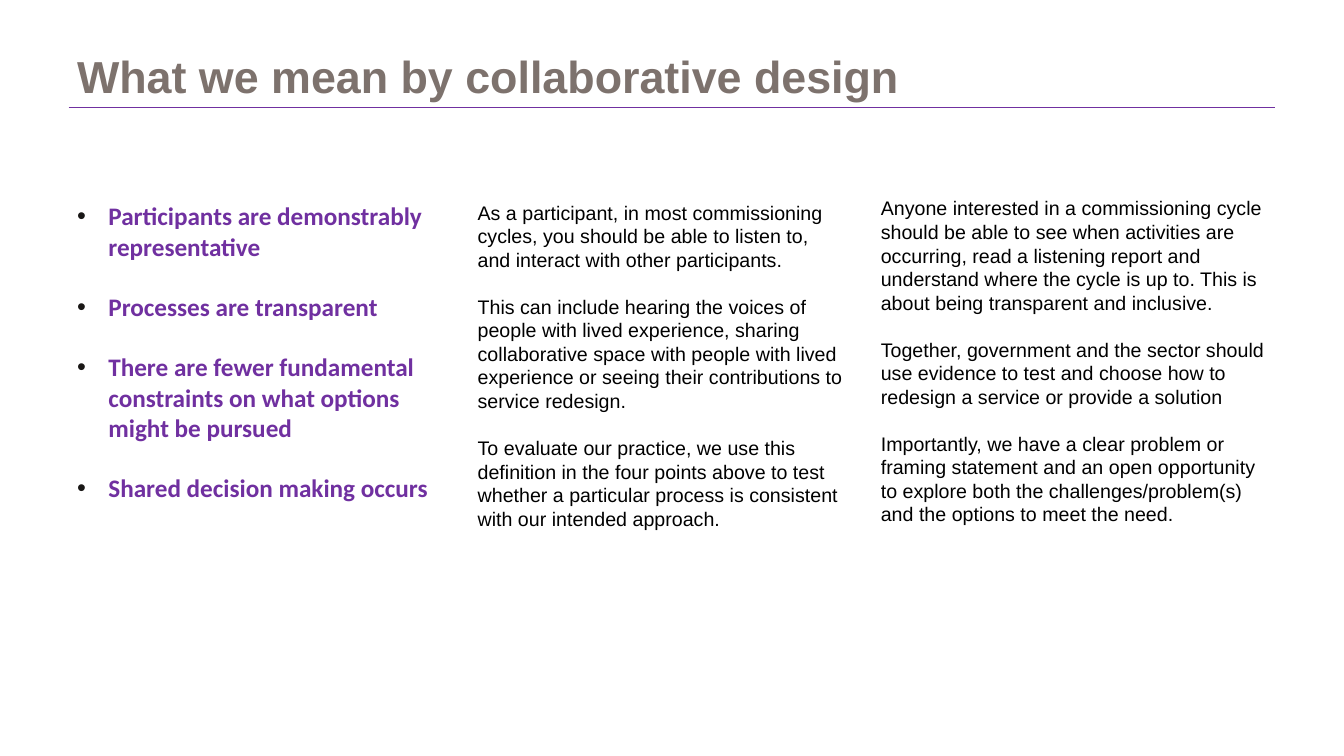
from dataclasses import dataclass

from lxml.etree import SubElement
from pptx import Presentation
from pptx.dml.color import RGBColor
from pptx.enum.shapes import MSO_CONNECTOR, MSO_SHAPE
from pptx.enum.text import MSO_ANCHOR, PP_ALIGN
from pptx.oxml.ns import qn
from pptx.util import Inches, Pt

WIDTH, HEIGHT = Inches(13.33), Inches(7.5)
COLUMNS, ROWS = 20, 25


@dataclass(frozen=True)
class TextStyle:
    font: str
    size: int
    color: str
    bold: bool = False


class Theme:
    purple = "7030A0"
    white = "FFFFFF"
    bullet = "191716"
    line_height = 1.2
    title = TextStyle("Arial", 32, "7D726D", True)
    principle = TextStyle("Calibri", 18, purple, True)
    body = TextStyle("Arial", 14, "000000")


TITLE = "What we mean by collaborative design"
PRINCIPLES = [
    "Participants are demonstrably representative",
    "Processes are transparent",
    "There are fewer fundamental constraints on what options might be pursued",
    "Shared decision making occurs",
]
PARTICIPATION = [
    "As a participant, in most commissioning cycles, you should be able to listen to, "
    "and interact with other participants.",
    "This can include hearing the voices of people with lived experience, sharing "
    "collaborative space with people with lived experience or seeing their "
    "contributions to service redesign.",
    "To evaluate our practice, we use this definition in the four points above to test "
    "whether a particular process is consistent with our intended approach.",
]
TRANSPARENCY = [
    "Anyone interested in a commissioning cycle should be able to see when activities "
    "are occurring, read a listening report and understand where the cycle is up to. "
    "This is about being transparent and inclusive.",
    "Together, government and the sector should use evidence to test and choose how to "
    "redesign a service or provide a solution",
    "Importantly, we have a clear problem or framing statement and an open opportunity "
    "to explore both the challenges/problem(s) and the options to meet the need.",
]


def across(columns):
    return int(WIDTH * columns / COLUMNS)


def down(rows):
    return int(HEIGHT * rows / ROWS)


def grid_box(column, row, columns, rows):
    return across(column), down(row), across(columns), down(rows)


def color(value):
    return RGBColor.from_string(value)


def add_run(paragraph, text, style):
    run = paragraph.add_run()
    run.text = text
    run.font.name = style.font
    run.font.size = Pt(style.size)
    run.font.bold = style.bold
    run.font.color.rgb = color(style.color)


def indent(paragraph, left, first=0.0):
    properties = paragraph._p.get_or_add_pPr()
    properties.set("marL", str(Inches(left)))
    properties.set("indent", str(Inches(first)))
    return properties


def add_bullet(paragraph):
    properties = indent(paragraph, 0.31, -0.31)
    bullet_color = SubElement(properties, qn("a:buClr"))
    SubElement(bullet_color, qn("a:srgbClr")).set("val", Theme.bullet)
    SubElement(properties, qn("a:buFont")).set("typeface", "Arial")
    SubElement(properties, qn("a:buChar")).set("char", "•")


def fill_text(frame, texts, style, format_paragraph):
    """Write paragraphs that are one line height apart."""
    frame.word_wrap = True
    frame.vertical_anchor = MSO_ANCHOR.TOP
    line = Pt(style.size * Theme.line_height)
    for index, text in enumerate(texts):
        paragraph = frame.add_paragraph() if index else frame.paragraphs[0]
        format_paragraph(paragraph)
        paragraph.alignment = PP_ALIGN.LEFT
        paragraph.line_spacing = line
        if index:
            paragraph.space_before = line
        add_run(paragraph, text, style)


def add_title(slide, text, box):
    frame = slide.shapes.add_textbox(*box).text_frame
    frame.word_wrap = True
    frame.vertical_anchor = MSO_ANCHOR.BOTTOM
    add_run(frame.paragraphs[0], text, Theme.title)


def add_rule(slide, start, end, row):
    rule = slide.shapes.add_connector(
        MSO_CONNECTOR.STRAIGHT, across(start), down(row), across(end), down(row))
    rule.line.color.rgb = color(Theme.purple)
    rule.line.width = Pt(0.75)
    SubElement(rule._element.spPr, qn("a:effectLst"))


def add_bullet_list(slide, texts, box):
    frame = slide.shapes.add_textbox(*box).text_frame
    fill_text(frame, texts, Theme.principle, add_bullet)


def add_text_panel(slide, texts, box, left):
    panel = slide.shapes.add_shape(MSO_SHAPE.RECTANGLE, *box)
    panel.shadow.inherit = False
    panel.fill.solid()
    panel.fill.fore_color.rgb = color(Theme.white)
    panel.line.fill.background()
    fill_text(panel.text_frame, texts, Theme.body,
              lambda paragraph: indent(paragraph, left))


def main():
    presentation = Presentation()
    presentation.slide_width, presentation.slide_height = WIDTH, HEIGHT
    slide = presentation.slides.add_slide(presentation.slide_layouts[6])

    # Heading with its rule
    add_rule(slide, 1.02, 18.98, 3.57)
    add_title(slide, TITLE, grid_box(1, 1, 18, 2.57))

    # Principles and the two explanatory columns
    add_bullet_list(slide, PRINCIPLES, grid_box(1, 6.47, 5.91, 11.43))
    add_text_panel(slide, PARTICIPATION, grid_box(6.81, 6.47, 5.91, 11.33), 0.1)
    add_text_panel(slide, TRANSPARENCY, grid_box(12.66, 6.33, 6.36, 11.33), 0.2)

    presentation.save("out.pptx")


if __name__ == "__main__":
    main()
